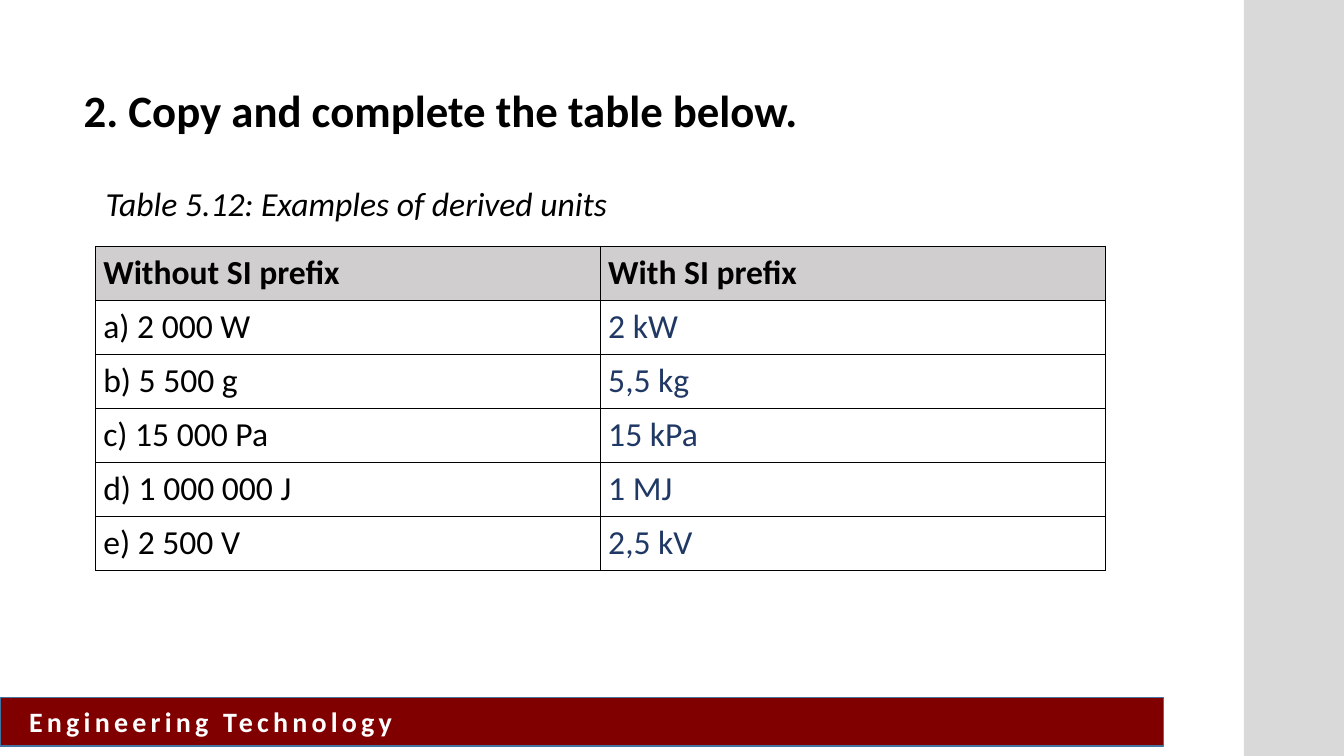
"""Build the slide with the exercise on SI prefixes of derived units."""
from lxml import etree
from pptx import Presentation
from pptx import util as u
from pptx.dml import color
from pptx.enum import shapes, text
from pptx.oxml import ns

FONT = "Calibri"
BLACK, WHITE, ANSWER = "000000", "FFFFFF", "203864"
UNIT_ROWS = [
    ("Without SI prefix", "With SI prefix"),
    ("a) 2 000 W", "2 kW"),
    ("b) 5 500 g", "5,5 kg"),
    ("c) 15 000 Pa", "15 kPa"),
    ("d) 1 000 000 J", "1 MJ"),
    ("e) 2 500 V", "2,5 kV"),
]


def rgb(value):
    return color.RGBColor.from_string(value)


def write(frame, words, size, hex_color=BLACK, bold=False, italic=False, line_spacing=1.0):
    frame.text = words
    paragraph = frame.paragraphs[0]
    paragraph.alignment = text.PP_ALIGN.LEFT
    paragraph.line_spacing = line_spacing
    font = paragraph.font
    font.name, font.size = FONT, u.Pt(size)
    font.bold, font.italic = bold, italic
    font.color.rgb = rgb(hex_color)
    return paragraph


def add_bar(slide, left, top, width, height, fill, line=None):
    shape = slide.shapes.add_shape(
        shapes.MSO_SHAPE.RECTANGLE, u.Pt(left), u.Pt(top), u.Pt(width), u.Pt(height))
    shape.shadow.inherit = False
    shape.fill.solid()
    shape.fill.fore_color.rgb = rgb(fill)
    if line:
        shape.line.color.rgb = rgb(line)
        shape.line.width = u.Pt(1)
    else:
        shape.line.fill.background()
    return shape


def add_footer(slide):
    bar = add_bar(slide, 0, 498.2, 831, 34.6, "800000", "43739E")
    frame = bar.text_frame
    frame.vertical_anchor = text.MSO_ANCHOR.MIDDLE
    frame.margin_left = u.Pt(20.8)
    paragraph = write(frame, "Engineering Technology", 20, WHITE, bold=True)
    paragraph.runs[0].font._element.set("spc", "300")


def set_title(slide, words):
    title = slide.shapes.title
    title.left, title.top = u.Pt(52.6), u.Pt(55.4)
    title.width, title.height = u.Pt(529.2), u.Pt(46)
    frame = title.text_frame
    frame.word_wrap = False
    frame.auto_size = text.MSO_AUTO_SIZE.NONE
    frame.vertical_anchor = text.MSO_ANCHOR.TOP
    write(frame, words, 32, bold=True)


def add_caption(slide, words):
    box = slide.shapes.add_textbox(u.Pt(68.4), u.Pt(127.4), u.Pt(450.7), u.Pt(36.7))
    box.text_frame.word_wrap = True
    write(box.text_frame, words, 24, italic=True)


def set_borders(cell):
    properties = cell._tc.get_or_add_tcPr()
    for side in ("a:lnL", "a:lnR", "a:lnT", "a:lnB"):
        line = etree.SubElement(properties, ns.qn(side), w=str(u.Pt(1)))
        fill = etree.SubElement(line, ns.qn("a:solidFill"))
        etree.SubElement(fill, ns.qn("a:srgbClr"), val=BLACK)


def add_unit_table(slide, rows):
    frame = slide.shapes.add_table(
        len(rows), 2, u.Pt(68.4), u.Pt(175.9), u.Pt(721.4), u.Pt(38.64 * len(rows)))
    table = frame.table
    table.first_row = table.horz_banding = False
    for row_index, row in enumerate(rows):
        header = row_index == 0
        for column_index, words in enumerate(row):
            cell = table.cell(row_index, column_index)
            cell.margin_left = cell.margin_right = u.Pt(5.4)
            cell.margin_top = cell.margin_bottom = 0
            set_borders(cell)
            if header:
                cell.fill.solid()
                cell.fill.fore_color.rgb = rgb("D0CECE")
            else:
                cell.fill.background()
            hex_color = ANSWER if column_index and not header else BLACK
            write(cell.text_frame, words, 24, hex_color, bold=header, line_spacing=1.15)


def main():
    presentation = Presentation()
    presentation.slide_width, presentation.slide_height = u.Pt(960), u.Pt(540)
    slide = presentation.slides.add_slide(presentation.slide_layouts[5])
    add_footer(slide)
    add_bar(slide, 888.5, 0, 71.5, 540, "D9D9D9")
    set_title(slide, "2. Copy and complete the table below.")
    add_unit_table(slide, UNIT_ROWS)
    add_caption(slide, "Table 5.12: Examples of derived units")
    presentation.save("out.pptx")


if __name__ == "__main__":
    main()
